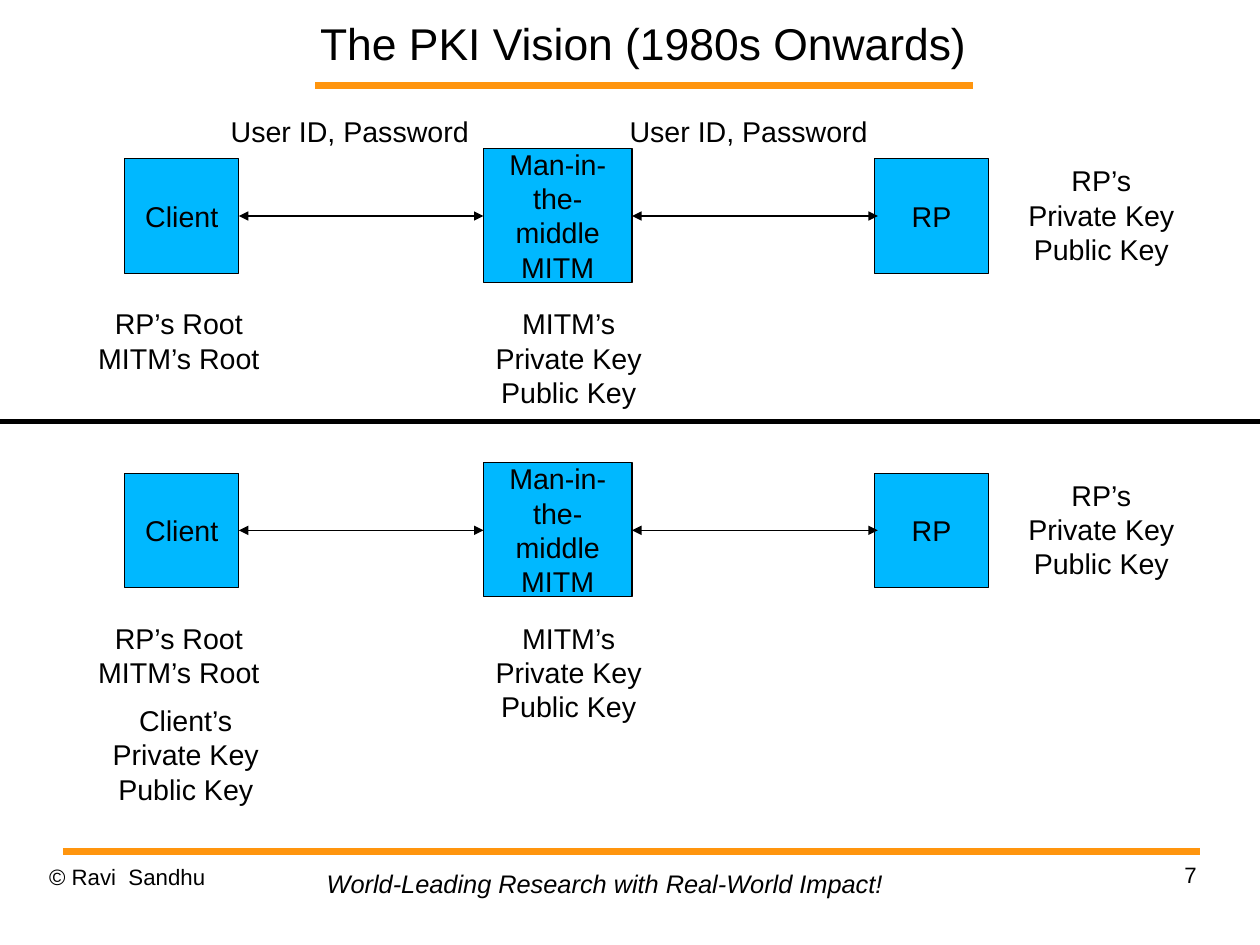
from collections import namedtuple
from lxml.etree import SubElement
from pptx import Presentation
from pptx.dml.color import RGBColor
from pptx.enum.shapes import MSO_CONNECTOR, MSO_SHAPE
from pptx.enum.text import MSO_ANCHOR, MSO_AUTO_SIZE, PP_ALIGN
from pptx.oxml.ns import qn
from pptx.util import Cm, Inches, Pt

Theme = namedtuple("Theme", "font ink box rule title label slogan footer thin thick bar")
theme = Theme(
    font="Arial", ink=RGBColor(0, 0, 0), box=RGBColor(0, 0xB8, 0xFF),
    rule=RGBColor(0xFF, 0x95, 0x0E), title=28, label=18, slogan=16, footer=14,
    thin=0.75, thick=3, bar=4.31,
)

# Grid in inches: columns as (left, width), rows measured from the top of a band
BAND_TOPS = (0.95, 3.7)
CLIENT, MITM, RP = (1.09, 1), (4.23, 1.3), (7.65, 1)
ROOTS, CLIENT_KEYS, MITM_KEYS, RP_KEYS = (0.75, 1.63), (0.88, 1.49), (4.23, 1.49), (8.89, 1.49)
BOX_ROW, MITM_ROW, KEY_ROW, CLIENT_KEY_ROW = 0.44, 0.35, 1.68, 2.4
ARROW_ROW = BOX_ROW + 0.5
KEYS = "{}\nPrivate Key\nPublic Key"

deck = Presentation()
deck.slide_width, deck.slide_height = Cm(28), Cm(21)
slide = deck.slides.add_slide(deck.slide_layouts[5])


def write(text, left, top, width, height, holder=None, size=theme.label, italic=False,
          align=PP_ALIGN.CENTER, anchor=MSO_ANCHOR.TOP, wrap=False, inset=True, spacing=1.0):
    area = [Inches(length) for length in (left, top, width, height)]
    if holder is None:
        holder = slide.shapes.add_textbox(*area)
    holder.left, holder.top, holder.width, holder.height = area
    frame = holder.text_frame
    frame.text = text
    frame.auto_size = MSO_AUTO_SIZE.NONE
    frame.word_wrap, frame.vertical_anchor = wrap, anchor
    frame.margin_left = frame.margin_right = Inches(0.1 if inset else 0)
    frame.margin_top = frame.margin_bottom = Inches(0.05 if inset else 0)
    for paragraph in frame.paragraphs:
        paragraph.alignment, paragraph.line_spacing = align, spacing
        for run in paragraph.runs:
            run.font.name, run.font.size = theme.font, Pt(size)
            run.font.italic, run.font.color.rgb = italic, theme.ink


def draw_line(start, end, y, weight, color=theme.ink, arrows=False):
    line = slide.shapes.add_connector(
        MSO_CONNECTOR.STRAIGHT, Inches(start), Inches(y), Inches(end), Inches(y))
    line.line.color.rgb, line.line.width = color, Pt(weight)
    properties = line._element.spPr
    if arrows:
        for tip in ("a:headEnd", "a:tailEnd"):
            SubElement(properties.find(qn("a:ln")), qn(tip), type="triangle")
    SubElement(properties, qn("a:effectLst"))


# Title and orange rules
write("The PKI Vision (1980s Onwards)", 2.41, 0, 6.43, 0.75, holder=slide.shapes.title,
      size=theme.title, anchor=MSO_ANCHOR.MIDDLE, wrap=True, inset=False)
draw_line(2.76, 8.51, 0.75, theme.bar, theme.rule)
draw_line(0.55, 10.5, 7.45, theme.bar, theme.rule)

# Footer
write("© Ravi  Sandhu", 0.43, 7.55, 2.57, 0.57, size=theme.footer,
      align=PP_ALIGN.LEFT, wrap=True, inset=False, spacing=1.01)
write("World-Leading Research with Real-World Impact!", 2.76, 7.55, 5.08, 0.37,
      size=theme.slogan, italic=True, align=PP_ALIGN.LEFT)
write("7", 7.9, 7.53, 2.57, 0.57, size=theme.footer,
      align=PP_ALIGN.RIGHT, wrap=True, inset=False, spacing=1.01)

# The same chain of parties in both bands
for band in BAND_TOPS:
    for party, (left, width), row, height in (
            ("Client", CLIENT, BOX_ROW, 1),
            ("Man-in-the-middle MITM", MITM, MITM_ROW, 1.17),
            ("RP", RP, BOX_ROW, 1)):
        box = slide.shapes.add_shape(MSO_SHAPE.RECTANGLE, 0, 0, 0, 0)
        box.shadow.inherit = False
        box.fill.solid()
        box.fill.fore_color.rgb = theme.box
        box.line.color.rgb, box.line.width = theme.ink, Pt(theme.thin)
        write(party, left, band + row, width, height, holder=box,
              anchor=MSO_ANCHOR.MIDDLE, wrap=True)

    for start, end in ((sum(CLIENT), MITM[0]), (sum(MITM), RP[0] + 0.03)):
        draw_line(start, end, band + ARROW_ROW, theme.thin, arrows=True)

    for holdings, (left, width), row, height in (
            ("RP’s Root\nMITM’s Root", ROOTS, KEY_ROW, 0.71),
            (KEYS.format("MITM’s"), MITM_KEYS, KEY_ROW, 1.01),
            (KEYS.format("RP’s"), RP_KEYS, BOX_ROW - 0.01, 1.01)):
        write(holdings, left, band + row, width, height)

# Upper band: passwords on the links; lower band: keys of the client
for left in (1.92, 5.41):
    write("User ID, Password", left, BAND_TOPS[0], 2.31, 0.4, align=PP_ALIGN.LEFT)
write(KEYS.format("Client’s"), CLIENT_KEYS[0], BAND_TOPS[1] + CLIENT_KEY_ROW,
      CLIENT_KEYS[1], 1.01)

# Divider between the bands
draw_line(0, deck.slide_width.inches, 3.69, theme.thick)

deck.save("out.pptx")
